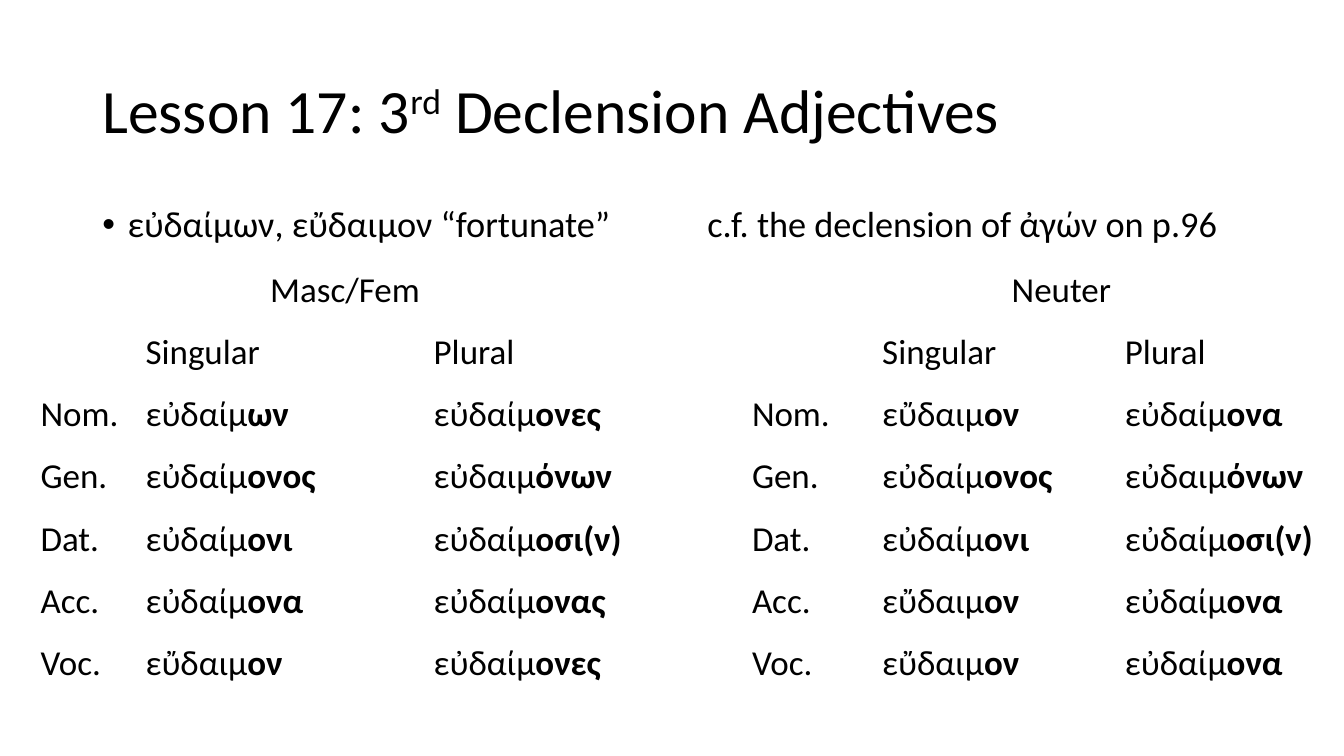
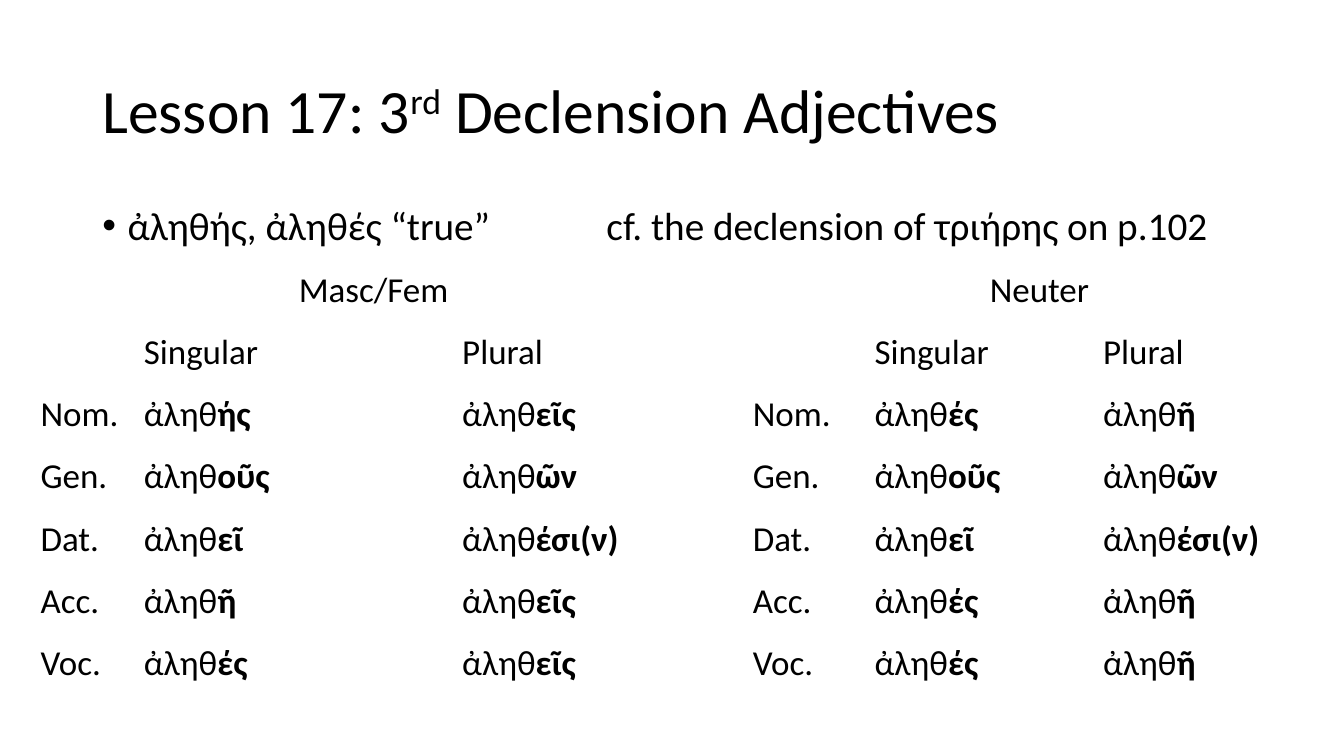
from dataclasses import dataclass

from lxml import etree
from pptx import Presentation
from pptx.dml.color import RGBColor
from pptx.enum.text import MSO_ANCHOR, PP_ALIGN
from pptx.oxml.ns import qn
from pptx.util import Inches, Pt

TOP = MSO_ANCHOR.TOP
MIDDLE = MSO_ANCHOR.MIDDLE
LEFT = PP_ALIGN.LEFT
RIGHT = PP_ALIGN.RIGHT

GRID_COLUMNS = 160
GRID_ROWS = 90
PLAIN_TABLE = "{2D5ABB26-0587-4C30-8999-92F81FD0307C}"


@dataclass(frozen=True)
class Theme:
    font: str = "Calibri"
    ink: RGBColor = RGBColor(0, 0, 0)
    title_size: float = 44
    table_size: float = 25
    superscript: str = "30000"


def apply_format(target, values):
    for name, value in values.items():
        setattr(target, name, value)


class Deck:
    def __init__(self, theme):
        self.theme = theme
        self.presentation = Presentation()
        apply_format(self.presentation,
                     {"slide_width": Inches(13.33), "slide_height": Inches(7.5)})
        self.slide = None

    def across(self, columns):
        return round(self.presentation.slide_width * columns / GRID_COLUMNS)

    def down(self, rows):
        return round(self.presentation.slide_height * rows / GRID_ROWS)

    def add_slide(self):
        blank = self.presentation.slide_layouts[6]
        self.slide = self.presentation.slides.add_slide(blank)

    def add_run(self, paragraph, text, size, bold=False):
        run = paragraph.add_run()
        run.text = text
        apply_format(run.font, {"name": self.theme.font, "size": Pt(size), "bold": bold})
        run.font.color.rgb = self.theme.ink
        return run

    def add_text_box(self, top, height, anchor, paragraph_format):
        shape = self.slide.shapes.add_textbox(
            self.across(11), self.down(top), self.across(138), self.down(height))
        apply_format(shape.text_frame, {"word_wrap": True, "vertical_anchor": anchor})
        paragraph = shape.text_frame.paragraphs[0]
        apply_format(paragraph, paragraph_format)
        return paragraph

    def add_title(self, before, raised, after):
        paragraph = self.add_text_box(4.8, 17.4, MIDDLE, {"line_spacing": 0.9})
        size = self.theme.title_size
        self.add_run(paragraph, before, size)
        run = self.add_run(paragraph, raised, size)
        run.font._element.set("baseline", self.theme.superscript)
        self.add_run(paragraph, after, size)

    def add_bullet(self, lemma, reference, tab_inches, size):
        paragraph = self.add_text_box(
            24, 7.7, TOP, {"line_spacing": 0.9, "space_before": Pt(10)})
        properties = paragraph._p.get_or_add_pPr()
        properties.set("marL", str(Inches(0.25)))
        properties.set("indent", str(-Inches(0.25)))
        etree.SubElement(properties, qn("a:buFont")).set("typeface", "Arial")
        etree.SubElement(properties, qn("a:buChar")).set("char", "•")
        stops = etree.SubElement(properties, qn("a:tabLst"))
        stop = etree.SubElement(stops, qn("a:tab"))
        stop.set("pos", str(Inches(tab_inches)))
        stop.set("algn", "l")
        self.add_run(paragraph, f"{lemma}\t{reference}", size)

    def add_cell(self, cell, text, alignment):
        cell.fill.background()
        apply_format(cell, {
            "margin_left": Inches(0.07), "margin_right": Inches(0.07),
            "margin_top": 0, "margin_bottom": 0, "vertical_anchor": TOP})
        paragraph = cell.text_frame.paragraphs[0]
        apply_format(paragraph, {"alignment": alignment, "line_spacing": 1.07})
        for part, bold in zip(text.split("|"), (False, True)):
            if part:
                self.add_run(paragraph, part, self.theme.table_size, bold)

    def add_table(self, rows, widths):
        row_height = self.down(7.4)
        frame = self.slide.shapes.add_table(
            len(rows), len(widths), self.across(4), self.down(31.7),
            self.across(sum(widths)), row_height * len(rows))
        table = frame.table
        apply_format(table, {"first_row": False, "horz_banding": False})
        table._tbl.tblPr.find(qn("a:tableStyleId")).text = PLAIN_TABLE
        for column, width in zip(table.columns, widths):
            column.width = self.across(width)
        for row_index, texts in enumerate(rows):
            table.rows[row_index].height = row_height
            alignment = RIGHT if row_index == 0 else LEFT
            for column_index, text in enumerate(texts):
                self.add_cell(table.cell(row_index, column_index), text, alignment)


CASES = ("Nom.", "Gen.", "Dat.", "Acc.", "Voc.")
HEADINGS = [
    ("", "Masc/Fem", "", "", "", "Neuter", ""),
    ("", "Singular", "Plural", "", "", "Singular", "Plural"),
]

LESSONS = (
    {
        "bullet": ("εὐδαίμων, εὔδαιμον “fortunate”",
                   "c.f. the declension of ἀγών on p.96", 6, 25.9),
        "widths": (12.5, 34.3, 27.8, 10.1, 15.5, 28.9, 25.2),
        "forms": (
            ("εὐδαίμ|ων", "εὐδαίμ|ονες", "εὔδαιμ|ον", "εὐδαίμ|ονα"),
            ("εὐδαίμ|ονος", "εὐδαιμ|όνων", "εὐδαίμ|ονος", "εὐδαιμ|όνων"),
            ("εὐδαίμ|ονι", "εὐδαίμ|οσι(ν)", "εὐδαίμ|ονι", "εὐδαίμ|οσι(ν)"),
            ("εὐδαίμ|ονα", "εὐδαίμ|ονας", "εὔδαιμ|ον", "εὐδαίμ|ονα"),
            ("εὔδαιμ|ον", "εὐδαίμ|ονες", "εὔδαιμ|ον", "εὐδαίμ|ονα"),
        ),
    },
    {
        "bullet": ("ἀληθής, ἀληθές “true”",
                   "cf. the declension of τριήρης on p.102", 5, 28),
        "widths": (12.3, 37.9, 23.3, 11.3, 14.5, 27.2, 25.6),
        "forms": (
            ("ἀληθ|ής", "ἀληθ|εῖς", "ἀληθ|ές", "ἀληθ|ῆ"),
            ("ἀληθ|οῦς", "ἀληθ|ῶν", "ἀληθ|οῦς", "ἀληθ|ῶν"),
            ("ἀληθ|εῖ", "ἀληθ|έσι(ν)", "ἀληθ|εῖ", "ἀληθ|έσι(ν)"),
            ("ἀληθ|ῆ", "ἀληθ|εῖς", "ἀληθ|ές", "ἀληθ|ῆ"),
            ("ἀληθ|ές", "ἀληθ|εῖς", "ἀληθ|ές", "ἀληθ|ῆ"),
        ),
    },
)


def main():
    deck = Deck(Theme())
    for lesson in LESSONS:
        deck.add_slide()
        deck.add_title("Lesson 17: 3", "rd", " Declension Adjectives")
        deck.add_bullet(*lesson["bullet"])
        paradigm = [(case, *forms[:2], "", case, *forms[2:])
                    for case, forms in zip(CASES, lesson["forms"])]
        deck.add_table(HEADINGS + paradigm, lesson["widths"])
    deck.presentation.save("out.pptx")


if __name__ == "__main__":
    main()
